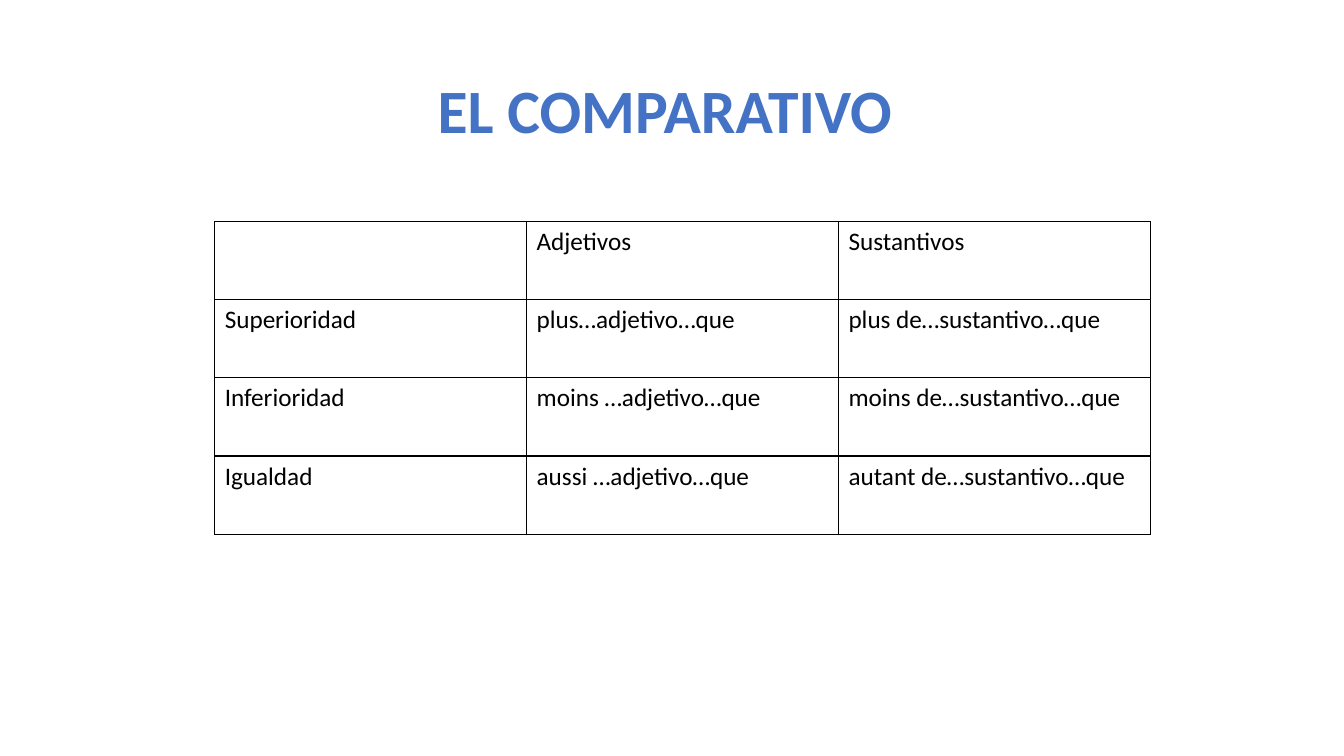
import pptx
import pptx.dml.color
import pptx.enum.text
import pptx.oxml
import pptx.oxml.ns
import pptx.util

Cm = pptx.util.Cm
Pt = pptx.util.Pt

COLORS = {"title": "4472C4", "text": "000000", "border": "000000"}
TITLE_FONT = {"name": "Calibri", "size": Pt(44), "bold": True}
CELL_FONT = {"name": "Calibri", "size": Pt(18), "bold": False}

COMPARATIVES = [
    ["", "Adjetivos", "Sustantivos"],
    ["Superioridad", "plus…adjetivo…que", "plus de…sustantivo…que"],
    ["Inferioridad", "moins …adjetivo…que", "moins de…sustantivo…que"],
    ["Igualdad", "aussi …adjetivo…que", "autant de…sustantivo…que"],
]
COLUMN_WIDTH = Cm(7.86)
ROW_HEIGHT = Cm(1.97)


def format_font(font, values, color):
    for attribute, value in values.items():
        setattr(font, attribute, value)
    font.color.rgb = pptx.dml.color.RGBColor.from_string(COLORS[color])


def add_title(slide, text):
    heading = slide.shapes.add_textbox(Cm(2.33), Cm(1.01), Cm(29.21), Cm(3.68))
    frame = heading.text_frame
    frame.word_wrap = True
    frame.vertical_anchor = pptx.enum.text.MSO_ANCHOR.MIDDLE
    line = frame.paragraphs[0]
    line.alignment = pptx.enum.text.PP_ALIGN.CENTER
    line.line_spacing = 0.9
    run = line.add_run()
    run.text = text
    format_font(run.font, TITLE_FONT, "title")


def add_borders(cell):
    properties = cell._tc.get_or_add_tcPr()
    for side in ("lnL", "lnR", "lnT", "lnB"):
        properties.append(pptx.oxml.parse_xml(
            f'<a:{side} {pptx.oxml.ns.nsdecls("a")} w="{Pt(1)}"><a:solidFill>'
            f'<a:srgbClr val="{COLORS["border"]}"/></a:solidFill></a:{side}>'))


def add_grid(slide, rows):
    row_count, column_count = len(rows), len(rows[0])
    grid = slide.shapes.add_table(
        row_count, column_count, Cm(5.41), Cm(5.58),
        COLUMN_WIDTH * column_count, ROW_HEIGHT * row_count).table
    grid.first_row = False
    grid.horz_banding = False
    for column in grid.columns:
        column.width = COLUMN_WIDTH
    for row, texts in zip(grid.rows, rows):
        row.height = ROW_HEIGHT
        for cell, text in zip(row.cells, texts):
            cell.text = text
            format_font(cell.text_frame.paragraphs[0].font, CELL_FONT, "text")
            for run in cell.text_frame.paragraphs[0].runs:
                format_font(run.font, CELL_FONT, "text")
            add_borders(cell)
            cell.fill.background()


def main():
    deck = pptx.Presentation()
    deck.slide_width = Cm(33.87)
    deck.slide_height = Cm(19.05)
    slide = deck.slides.add_slide(deck.slide_layouts[6])

    # Heading
    add_title(slide, "EL COMPARATIVO ")

    # Comparison table
    add_grid(slide, COMPARATIVES)

    deck.save("out.pptx")


if __name__ == "__main__":
    main()
